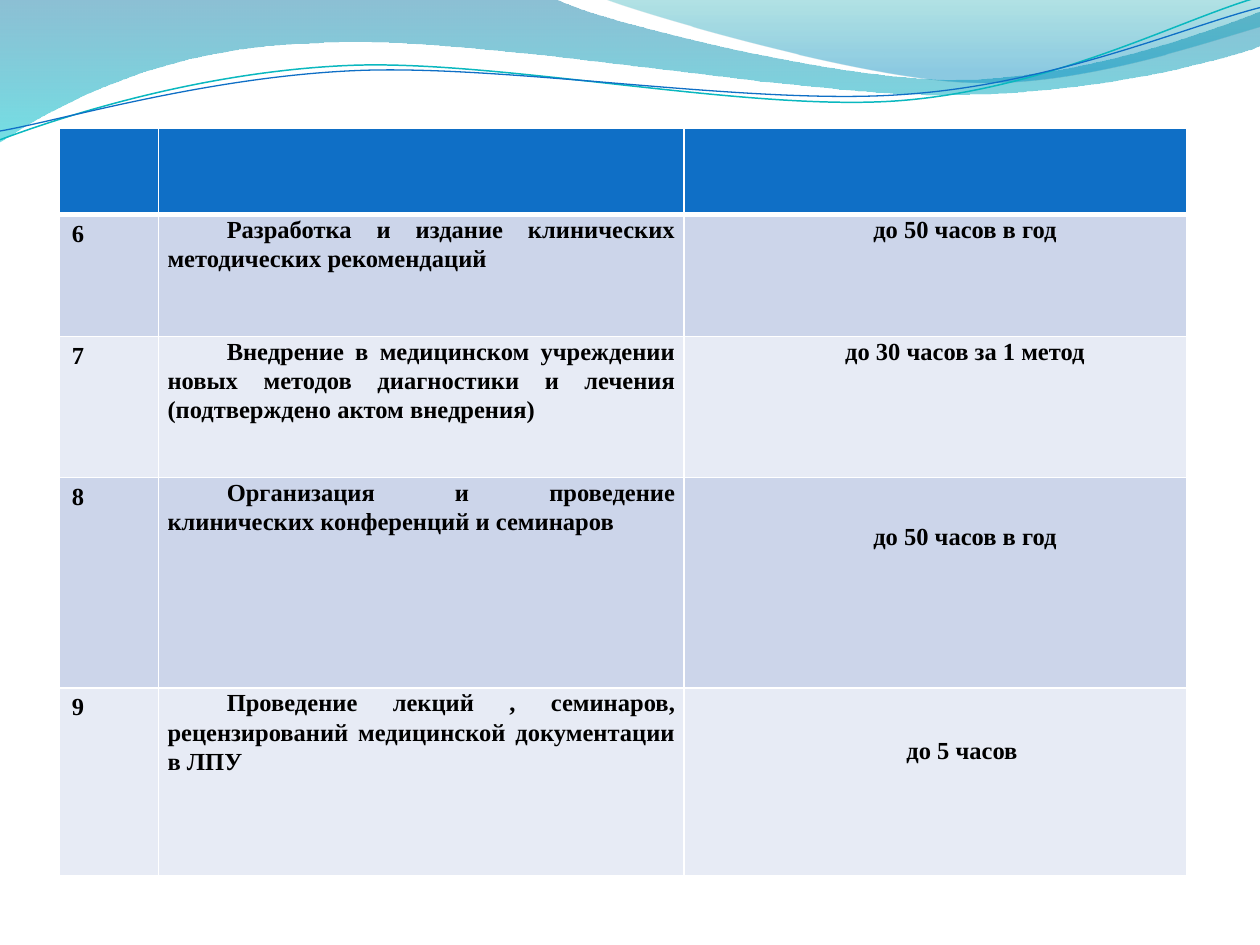
from math import cos, radians, sin
from pptx import Presentation
from pptx.dml.color import RGBColor
from pptx.enum.text import PP_ALIGN as AL
from pptx.oxml.ns import qn
from pptx.util import Inches, Pt
from lxml.etree import SubElement

TILT = 357.3  # rotation of the waves, degrees


def rgb(hex_color):
    return RGBColor.from_string(hex_color)


def write(p, text, size=14, bold=True, color="000000", font="Times New Roman",
          align=AL.LEFT, spacing=1.0, indent=0):
    p.alignment, p.line_spacing = align, spacing
    if indent:
        pPr = p._p.get_or_add_pPr()
        pPr.set("marL", "0")
        pPr.set("indent", str(Inches(indent)))
    for i, line in enumerate(text.split("\n")):
        if i:
            p.add_line_break()
        r = p.add_run()
        r.text = line
        r.font.name, r.font.size, r.font.bold = font, Pt(size), bold
        r.font.color.rgb = rgb(color)


def turn(points, box, degrees):
    """Rotate a flat list x, y, x, y, ... about the middle of the box."""
    x, y, w, h = box
    cx, cy, a = x + w / 2, y + h / 2, radians(degrees)
    out = []
    for px, py in zip(points[::2], points[1::2]):
        dx, dy = px - cx, py - cy
        out += [cx + dx * cos(a) - dy * sin(a), cy + dx * sin(a) + dy * cos(a)]
    return out


class SlideBuilder:
    header, bands, border = "0F6FC6", ("CCD5EA", "E7EBF5"), "FFFFFF"

    def __init__(self, s):
        self.s = s

    def outline(self, box, start, segments, close):
        """Segments hold two numbers for a line and six for a cubic curve."""
        ends = [(Inches(seg[-2]), Inches(seg[-1])) for seg in segments]
        builder = self.s.shapes.build_freeform(Inches(start[0]), Inches(start[1]))
        builder.add_line_segments(ends, close=close)
        sp = builder.convert_to_shape()
        sp.left, sp.top, sp.width, sp.height = [Inches(v) for v in box]
        outline = next(sp._element.iter(qn("a:path")))
        outline.set("w", str(sp.width))
        outline.set("h", str(sp.height))
        for step in list(outline):
            outline.remove(step)
        tags = {2: "a:lnTo", 6: "a:cubicBezTo"}
        steps = [("a:moveTo", start)] + [(tags[len(seg)], seg) for seg in segments]
        for tag, seg in steps:
            step = SubElement(outline, qn(tag))
            for x, y in zip(seg[::2], seg[1::2]):
                SubElement(step, qn("a:pt"), x=str(Inches(x - box[0])),
                           y=str(Inches(y - box[1])))
        if close:
            SubElement(outline, qn("a:close"))
        sp.shadow.inherit = False
        return sp

    def ribbon(self, box, start, segments, stops):
        sp = self.outline(box, start, segments, True)
        sp.line.fill.background()
        sp.fill.gradient()
        sp.fill.gradient_angle = 270
        for stop, (position, color, _) in zip(sp.fill.gradient_stops, stops):
            stop.position, stop.color.rgb = position, rgb(color)
        for clr, (_, _, alpha) in zip(sp._element.spPr.iter(qn("a:srgbClr")), stops):
            SubElement(clr, qn("a:alpha"), val=str(alpha * 1000))

    def wave(self, box, start, segments, color, width):
        level = [turn(seg, box, -TILT) for seg in [start] + segments]
        sp = self.outline(box, level[0], level[1:], False)
        sp.rotation = TILT
        sp.fill.background()
        sp.line.color.rgb, sp.line.width = rgb(color), Pt(width)

    def style_cell(self, cell, fill, top=1, bottom=1):
        tcPr = cell._tc.get_or_add_tcPr()
        for side, width in (("L", 1), ("R", 1), ("T", top), ("B", bottom)):
            ln = SubElement(tcPr, qn(f"a:ln{side}"), w=str(Pt(width)))
            solid = SubElement(ln, qn("a:solidFill"))
            SubElement(solid, qn("a:srgbClr"), val=self.border)
        cell.fill.solid()
        cell.fill.fore_color.rgb = rgb(fill)

    def table(self, x, y, widths, heights, rows):
        tbl = self.s.shapes.add_table(len(heights), len(widths), Inches(x), Inches(y),
                                      Inches(sum(widths)), Inches(sum(heights))).table
        for col, width in zip(tbl.columns, widths):
            col.width = Inches(width)
        for row, height in zip(tbl.rows, heights):
            row.height = Inches(height)
        for cell in tbl.rows[0].cells:
            self.style_cell(cell, self.header, bottom=3)
        for i, (number, activity, hours, drop) in enumerate(rows):
            cells = list(tbl.rows[i + 1].cells)
            for cell in cells:
                self.style_cell(cell, self.bands[i % 2], top=1 if i else 3)
            write(cells[0].text_frame.paragraphs[0], number)
            for cell, text, align, top in ((cells[1], activity, AL.JUSTIFY, 0),
                                           (cells[2], hours, AL.CENTER, drop)):
                cell.margin_left = cell.margin_right = Inches(0.07)
                cell.margin_top, cell.margin_bottom = Inches(top), 0
                write(cell.text_frame.paragraphs[0], text, align=align,
                      spacing=1.08, indent=0.47)


def main():
    prs = Presentation()
    prs.slide_width, prs.slide_height = Inches(10), Inches(7.5)
    b = SlideBuilder(prs.slides.add_slide(prs.slide_layouts[6]))

    # Ribbons along the top edge
    b.ribbon((-0.01, -0.01, 10.02, 1.14), (0, 0),
             [(4.4, -0.01), (4.76, 0.17, 6.64, 0.63, 7.58, 0.63),
              (8.53, 0.63, 9.58, 0.26, 10, 0.09), (10.01, 0.36),
              (9.83, 0.44, 8.7, 0.76, 7.46, 0.75),
              (6.22, 0.75, 3.82, 0.28, 2.57, 0.34),
              (1.29, 0.36, 0.46, 0.83, -0.01, 1.13), (0, 0)],
             [(0, "0074A1", 45), (1, "00C6CF", 55)])
    b.ribbon((4.79, -0.01, 5.21, 0.7), (4.79, -0.01),
             [(5.09, 0.11, 6.82, 0.62, 7.69, 0.65),
              (8.56, 0.69, 9.61, 0.32, 10, 0.21), (10, 0), (4.79, -0.01)],
             [(0, "00A1A9", 30), (0.8, "008BBF", 45)])

    # Thin waves
    b.wave((-0.02, 0.22, 10.02, 0.71), (0, 1.11),
           [(0.48, 0.93, 1.58, 0.57, 2.77, 0.52),
            (3.95, 0.47, 5.93, 0.89, 7.13, 0.8),
            (8.33, 0.71, 9.38, 0.15, 9.98, -0.02)], "0AB8BF", 0.85)
    b.wave((-0.02, 0.3, 10.03, 0.58), (0, 1.04),
           [(0.47, 0.96, 1.64, 0.61, 2.83, 0.56),
            (4.03, 0.51, 5.97, 0.84, 7.17, 0.75),
            (8.36, 0.67, 9.41, 0.21, 10, 0.06)], "0F6FC6", 0.75)

    # Activities and hours: number, activity, hours, top margin of the hours
    b.table(0.47, 1.02, [0.79, 4.17, 3.99], [0.68, 0.97, 1.12, 1.67, 1.49], [
        ("6", "Разработка и издание клинических методических рекомендаций",
         "до 50 часов в год", 0),
        ("7", "Внедрение в медицинском учреждении новых методов диагностики и лечения "
              "(подтверждено актом внедрения)", "до 30 часов за 1 метод", 0),
        ("8", "Организация и проведение клинических конференций и семинаров",
         "до 50 часов в год", 0.35),
        ("9", "Проведение лекций , семинаров, рецензирований медицинской "
              "документации\nв ЛПУ", "до 5 часов ", 0.38),
    ])
    prs.save("out.pptx")


if __name__ == "__main__":
    main()
